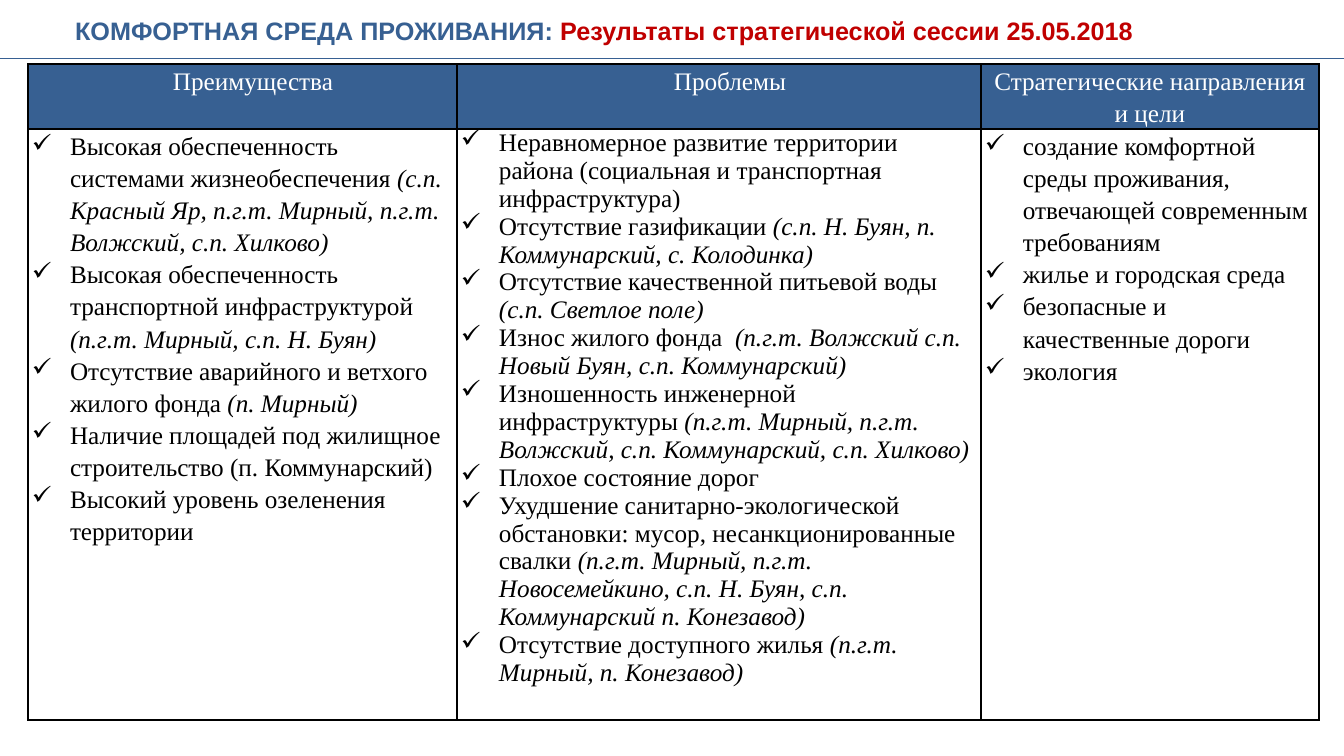
from lxml import etree
from pptx import Presentation
from pptx.dml.color import RGBColor
from pptx.enum.shapes import MSO_CONNECTOR
from pptx.enum.text import MSO_ANCHOR, MSO_AUTO_SIZE, PP_ALIGN
from pptx.oxml.ns import qn
from pptx.util import Emu, Pt

BLUE = RGBColor(0x37, 0x60, 0x92)
RED = RGBColor(0xC0, 0x00, 0x00)
BLACK = RGBColor(0x00, 0x00, 0x00)
WHITE = RGBColor(0xFF, 0xFF, 0xFF)
STRAIGHT = MSO_CONNECTOR.STRAIGHT
MIDDLE, TOP = MSO_ANCHOR.MIDDLE, MSO_ANCHOR.TOP
CENTER, LEFT, JUSTIFY = PP_ALIGN.CENTER, PP_ALIGN.LEFT, PP_ALIGN.JUSTIFY
NO_FIT = MSO_AUTO_SIZE.NONE
SERIF, SANS = "Times New Roman", "Arial"
INDENT = 38


def px(n):
    return Emu(round(n * 914400 / 100.8))


def add_run(par, text, face, color, bold=False, italic=False):
    run = par.add_run()
    run.text = text
    font = run.font
    font.name, font.size, font.color.rgb = face, Pt(18), color
    font.bold, font.italic = bold, italic


# Each column: heading, width, heading indent, line spacing, (plain, italic) items
COLUMNS = [
    ("Преимущества", 429, 21, 1.15, [
        ("Высокая обеспеченность системами жизнеобеспечения ",
         "(с.п. Красный Яр, п.г.т. Мирный, п.г.т. Волжский, с.п. Хилково)"),
        ("Высокая обеспеченность транспортной инфраструктурой ",
         "(п.г.т. Мирный, с.п. Н. Буян)"),
        ("Отсутствие аварийного и ветхого жилого фонда ", "(п. Мирный)"),
        ("Наличие площадей под жилищное строительство (п. Коммунарский)", ""),
        ("Высокий уровень озеленения территории", ""),
    ]),
    ("Проблемы", 524, 22, 1.0, [
        ("Неравномерное развитие территории района "
         "(социальная и транспортная инфраструктура)", ""),
        ("Отсутствие газификации ",
         "(с.п. Н. Буян, п. Коммунарский, с. Колодинка)"),
        ("Отсутствие качественной питьевой воды ", "(с.п. Светлое поле)"),
        ("Износ жилого фонда  ",
         "(п.г.т. Волжский с.п. Новый Буян, с.п. Коммунарский)"),
        ("Изношенность инженерной инфраструктуры ",
         "(п.г.т. Мирный, п.г.т. Волжский, с.п. Коммунарский, с.п. Хилково)"),
        ("Плохое состояние дорог", ""),
        ("Ухудшение санитарно-экологической обстановки: мусор, "
         "несанкционированные свалки ",
         "(п.г.т. Мирный, п.г.т. Новосемейкино, с.п. Н. Буян, "
         "с.п. Коммунарский п. Конезавод)"),
        ("Отсутствие доступного жилья ", "(п.г.т. Мирный, п. Конезавод)"),
    ]),
    ("Стратегические направления и цели", 338, 0, 1.15, [
        ("создание комфортной среды проживания, отвечающей современным "
         "требованиям", ""),
        ("жилье и городская среда", ""),
        ("безопасные и качественные дороги", ""),
        ("экология", ""),
    ]),
]

deck = Presentation()
deck.slide_width, deck.slide_height = px(1344), px(756)
slide = deck.slides.add_slide(deck.slide_layouts[5])

# Title
title = slide.shapes.title
title.left, title.top, title.width, title.height = px(65), px(11), px(1170), px(39)
frame = title.text_frame
frame.auto_size, frame.vertical_anchor = NO_FIT, MIDDLE
head = frame.paragraphs[0]
head.alignment = JUSTIFY
add_run(head, "КОМФОРТНАЯ СРЕДА ПРОЖИВАНИЯ: ", SANS, BLUE, bold=True)
add_run(head, "Результаты стратегической сессии 25.05.2018", SANS, RED, bold=True)

# Rule under the title
rule = slide.shapes.add_connector(STRAIGHT, 0, px(59), px(1344), px(59))
rule.line.color.rgb, rule.line.width = BLUE, Pt(0.75)
etree.SubElement(rule._element.spPr, qn("a:effectLst"))

# Table
width = sum(col[1] for col in COLUMNS)
table = slide.shapes.add_table(2, 3, px(28), px(64), px(width), px(656)).table
table.first_row = table.horz_banding = False
table.rows[0].height, table.rows[1].height = px(65), px(591)

# Cell borders, margins and fills
for i, cell in enumerate(table.iter_cells()):
    cell.margin_left = cell.margin_right = px(4)
    cell.margin_top = cell.margin_bottom = 0
    cell.vertical_anchor = TOP
    props = cell._tc.get_or_add_tcPr()
    for side in ("a:lnL", "a:lnR", "a:lnT", "a:lnB"):
        edge = etree.SubElement(props, qn(side), w=str(Pt(1)))
        paint = etree.SubElement(edge, qn("a:solidFill"))
        etree.SubElement(paint, qn("a:srgbClr"), val=str(BLACK))
    if i < len(COLUMNS):
        cell.fill.solid()
        cell.fill.fore_color.rgb = BLUE
    else:
        cell.fill.background()

# Headings and check lists
for c, (name, wide, shift, space, items) in enumerate(COLUMNS):
    table.columns[c].width = px(wide)
    par = table.cell(0, c).text_frame.paragraphs[0]
    par.alignment, par.line_spacing = CENTER, 1.15
    par._p.get_or_add_pPr().set("marL", str(px(shift)))
    add_run(par, name, SERIF, WHITE)

    body = table.cell(1, c).text_frame
    for n, (plain, places) in enumerate(items):
        par = body.add_paragraph() if n else body.paragraphs[0]
        par.alignment, par.line_spacing = LEFT, space
        props = par._p.get_or_add_pPr()
        props.set("marL", str(px(INDENT)))
        props.set("indent", str(-px(INDENT)))
        etree.SubElement(props, qn("a:buChar"), char="✓")
        add_run(par, plain, SERIF, BLACK)
        if places:
            add_run(par, places, SERIF, BLACK, italic=True)

deck.save("out.pptx")
